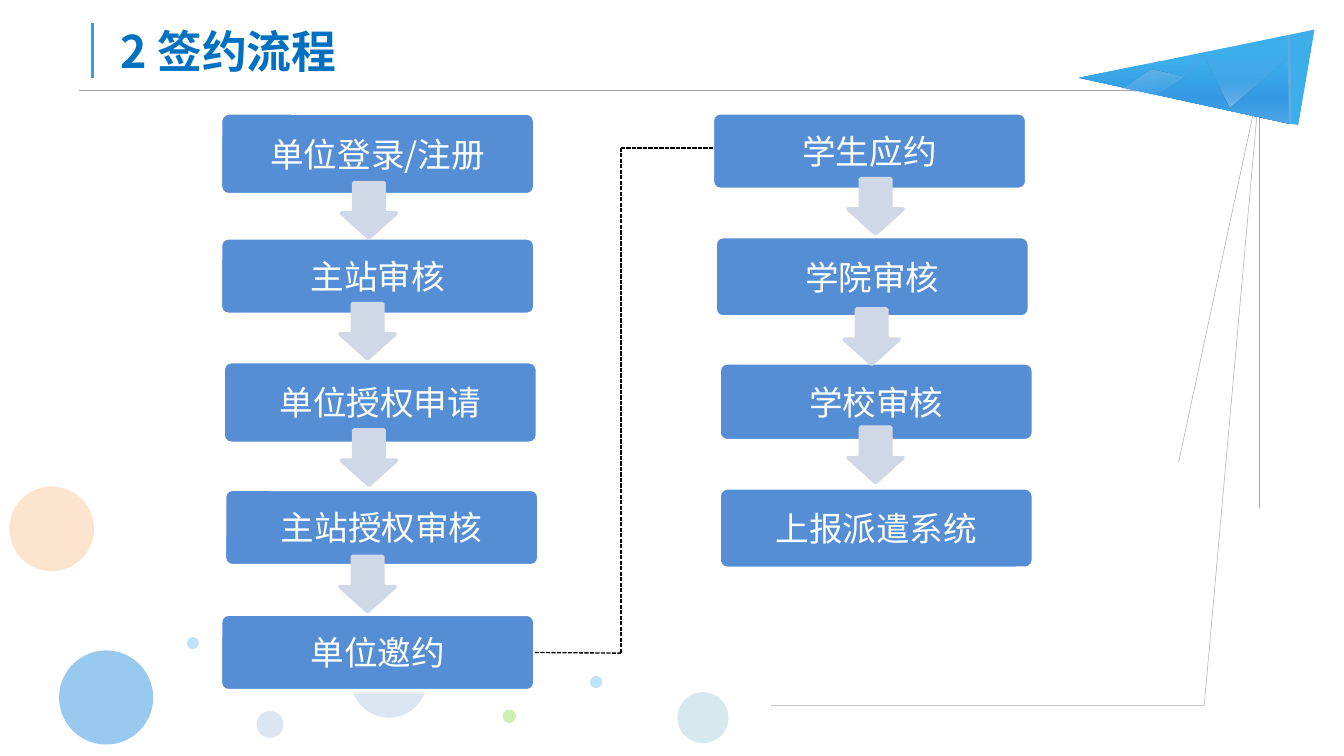
from lxml import etree
from pptx import Presentation
from pptx import util as u
from pptx.dml.color import RGBColor
from pptx.enum import dml, shapes, text
from pptx.oxml import ns

FONT = "Noto Sans CJK SC"
SHAPE = shapes.MSO_SHAPE
GREY = "A6A6A6"

STEPS = [
    ("单位登录/注册", 1.64, 0.84, 0.61),
    ("主站审核", 1.64, 1.77, 0.57),
    ("单位邀约", 1.64, 4.57, 0.57),
    ("学生应约", 5.3, 0.84, 0.57),
    ("学院审核", 5.32, 1.76, 0.6),
    ("学校审核", 5.35, 2.7, 0.58),
    ("上报派遣系统", 5.35, 3.63, 0.6),
    ("单位授权申请", 1.66, 2.69, 0.61),
    ("主站授权审核", 1.67, 3.64, 0.57),
]
ARROWS = [(2.54, 1.36), (2.53, 2.26), (6.28, 2.3), (6.31, 1.33),
          (2.54, 3.2), (6.31, 3.18), (2.53, 4.14)]
BUBBLES = [
    (0.44, 4.84, 0.7, "98CAF0"),
    (5.04, 5.15, 0.38, "D5E9EF"),
    (2.61, 4.77, 0.57, "DCE6F2"),
    (1.39, 4.74, 0.09, "BEE4FA"),
    (1.91, 5.29, 0.2, "DCE6F2"),
    (3.74, 5.28, 0.1, "CDF0B1"),
    (4.39, 5.03, 0.09, "BEE4FA"),
    (0.07, 3.62, 0.63, "FDE4CF"),
]
STRINGS = [
    ((8.52, 0.67), (0.59, 0.67)),
    ((9.37, 0.77), (9.37, 3.78)),
    ((9.36, 0.77), (8.96, 5.25)),
    ((9.36, 0.68), (8.77, 3.44)),
]


def inches(values):
    return [u.Inches(value) for value in values]


def rgb(color):
    return RGBColor.from_string(color)


def paint(shape, fill, line=None, width=0):
    shape.shadow.inherit = False
    shape.fill.solid()
    shape.fill.fore_color.rgb = rgb(fill)
    if line:
        shape.line.color.rgb = rgb(line)
        shape.line.width = u.Pt(width)
    else:
        shape.line.fill.background()


def paint_gradient(shape, stops):
    shape.shadow.inherit = False
    shape.line.fill.background()
    shape.fill.gradient()
    gradient = shape.element.spPr.find(ns.qn("a:gradFill"))
    stop_list = gradient.find(ns.qn("a:gsLst"))
    for stop in list(stop_list):
        stop_list.remove(stop)
    for position, color, opacity in stops:
        stop = etree.SubElement(stop_list, ns.qn("a:gs"), pos=str(position * 1000))
        shade = etree.SubElement(stop, ns.qn("a:srgbClr"), val=color)
        etree.SubElement(shade, ns.qn("a:alpha"), val=str(opacity * 1000))
    gradient.find(ns.qn("a:lin")).set("ang", str(90 * 60000))


def add_preset(slide, kind, box, rotation=0, adjustments=()):
    shape = slide.shapes.add_shape(kind, *inches(box))
    shape.rotation = rotation
    for index, value in enumerate(adjustments):
        shape.adjustments[index] = value
    return shape


def add_outline(slide, points):
    corners = [tuple(inches(point)) for point in points]
    builder = slide.shapes.build_freeform(*corners[0])
    builder.add_line_segments(corners[1:], close=True)
    return builder.convert_to_shape()


def add_line(slide, start, end, color, width, dashed=False):
    line = slide.shapes.add_connector(
        shapes.MSO_CONNECTOR.STRAIGHT, *inches(start), *inches(end))
    line.line.color.rgb = rgb(color)
    line.line.width = u.Pt(width)
    if dashed:
        line.line.dash_style = dml.MSO_LINE.SQUARE_DOT
    etree.SubElement(line.element.spPr, ns.qn("a:effectLst"))
    return line


def write(shape, words, size, color, bold=False):
    shape.text_frame.text = words
    run = shape.text_frame.paragraphs[0].runs[0]
    run.font.name = FONT
    run.font.size = u.Pt(size)
    run.font.bold = bold
    run.font.color.rgb = rgb(color)
    etree.SubElement(run.font._element, ns.qn("a:ea"), typeface=FONT)


def add_title(slide, words):
    title = slide.shapes.add_textbox(*inches((0.8, 0.13, 5.85, 0.5)))
    title.text_frame.word_wrap = True
    title.text_frame.auto_size = text.MSO_AUTO_SIZE.SHAPE_TO_FIT_TEXT
    write(title, words, 24, "0070C0", bold=True)


def add_step(slide, words, left, top, height):
    step = add_preset(slide, SHAPE.ROUNDED_RECTANGLE,
                      (left, top, 2.34, height), adjustments=[0.1])
    paint(step, "558ED5", "FFFFFF", 2)
    write(step, words, 18, "FFFFFF")
    step.text_frame.vertical_anchor = text.MSO_ANCHOR.MIDDLE
    step.text_frame.paragraphs[0].alignment = text.PP_ALIGN.CENTER
    return step


def add_arrow(slide, left, top):
    arrow = add_preset(slide, SHAPE.DOWN_ARROW, (left, top, 0.41, 0.41),
                       adjustments=[0.55, 0.45])
    paint(arrow, "D0D8E8", "D0D8E8", 2)


def add_kite(slide):
    top, middle, nose = (9.59, 0.26), (9.59, 0.92), (8.03, 0.58)
    tail = add_outline(slide, [(9.78, 0.22), (9.66, 0.93), middle, top])
    paint(tail, "3CAEEA")
    body = add_outline(slide, [top, middle, nose])
    paint_gradient(body, [(0, "3CAEEA", 100), (30, "3CAEEA", 100),
                          (70, "3499E2", 100), (100, "4BA4E5", 100)])
    fade = [(83, "4BA5E5", 40), (100, "4AA4E5", 20)]
    fold = add_preset(slide, SHAPE.ISOSCELES_TRIANGLE,
                      (8.96, 0.42, 0.64, 0.38), 180, [0.705])
    paint_gradient(fold, [(0, "6FB7EA", 100), (55, "61AFE8", 20)] + fade)
    facet = add_preset(slide, SHAPE.FLOWCHART_DECISION,
                       (8.35, 0.52, 0.47, 0.19), 349.9)
    paint_gradient(facet, [(0, "6FB7EA", 100), (77, "61AFE8", 20)] + fade)
    add_line(slide, (8.8, 0.57), (8.96, 0.42), "4BA4E5", 0.5)
    add_line(slide, top, (9.6, 0.92), "5BABE7", 1.5)


def add_link(slide, source):
    bend, low, high = 4.62, 4.86, 1.1
    leaving = add_line(slide, (3.98, low), (bend, low), "000000", 0.75, True)
    leaving.begin_connect(source, 3)
    add_line(slide, (bend, high), (bend, low), "000000", 0.75, True)
    add_line(slide, (bend, high), (5.31, high), "000000", 0.75, True)


def main():
    deck = Presentation()
    deck.slide_width = u.Inches(10)
    deck.slide_height = deck.slide_width * 9 // 16
    slide = deck.slides.add_slide(deck.slide_layouts[6])

    for start, end in STRINGS:
        add_line(slide, start, end, GREY, 0.25)
    for left, top, size, color in BUBBLES:
        paint(add_preset(slide, SHAPE.OVAL, (left, top, size, size)), color)
    add_line(slide, (8.96, 5.25), (5.74, 5.25), "C6C6C6", 0.75)
    add_kite(slide)
    add_line(slide, (0.69, 0.17), (0.69, 0.58), "3A9CE3", 1.5)
    add_title(slide, "2 签约流程")

    steps = {step[0]: add_step(slide, *step) for step in STEPS}
    for left, top in ARROWS:
        add_arrow(slide, left, top)
    add_link(slide, steps["单位邀约"])
    deck.save("out.pptx")


if __name__ == "__main__":
    main()
